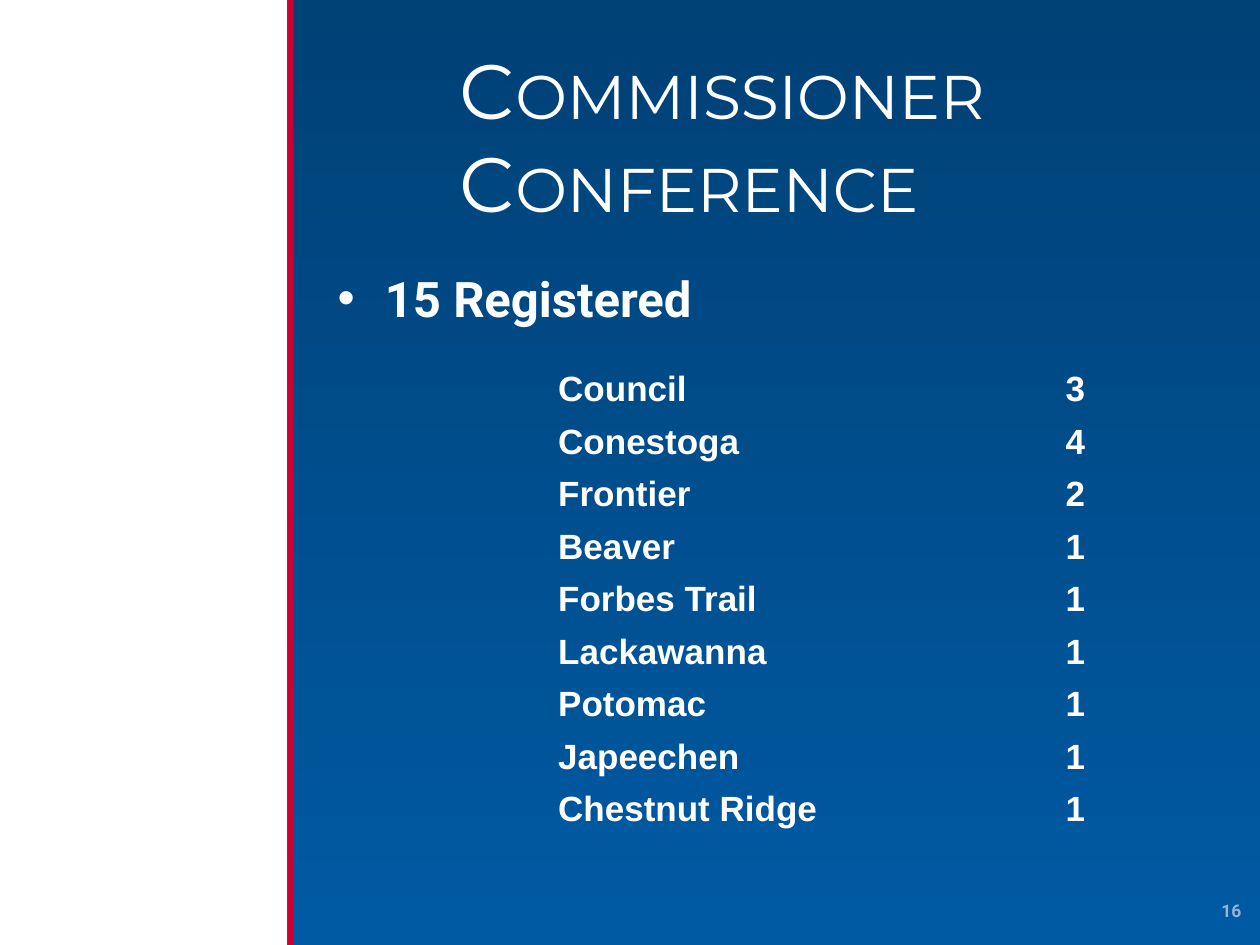
from pptx import Presentation
from pptx.dml.color import RGBColor
from pptx.enum.shapes import MSO_SHAPE
from pptx.enum.text import MSO_ANCHOR, MSO_AUTO_SIZE, PP_ALIGN
from pptx.util import Inches, Pt

COLS, ROWS = 100, 75
WHITE = "FFFFFF"
NO_GRID_STYLE = "{2D5ABB26-0587-4C30-8999-92F81FD0307C}"
REGISTRATIONS = [
    ("Council", 3),
    ("Conestoga", 4),
    ("Frontier", 2),
    ("Beaver", 1),
    ("Forbes Trail", 1),
    ("Lackawanna", 1),
    ("Potomac", 1),
    ("Japeechen", 1),
    ("Chestnut Ridge", 1),
]


def rgb(value):
    return RGBColor.from_string(value)


class Deck:
    """Holds the slide style and places elements on a 100 by 75 grid."""

    def __init__(self):
        self.prs = Presentation()
        self.prs.slide_width, self.prs.slide_height = Inches(10), Inches(7.5)
        self.slide = self.prs.slides.add_slide(self.prs.slide_layouts[1])

    def box(self, x, y, w, h):
        dx, dy = self.prs.slide_width / COLS, self.prs.slide_height / ROWS
        return int(x * dx), int(y * dy), int(w * dx), int(h * dy)

    def background(self, top, bottom):
        fill = self.slide.background.fill
        fill.gradient()
        fill.gradient_angle = 270
        for stop, position, color in zip(fill.gradient_stops, (0, 1), (top, bottom)):
            stop.position = position
            stop.color.rgb = rgb(color)

    def rect(self, area, color):
        sp = self.slide.shapes.add_shape(MSO_SHAPE.RECTANGLE, *self.box(*area))
        sp.shadow.inherit = False
        sp.fill.solid()
        sp.fill.fore_color.rgb = rgb(color)
        sp.line.fill.background()

    def set_text(self, tf, text, size, font, color=WHITE, bold=False, align=PP_ALIGN.LEFT):
        tf.text = text
        p = tf.paragraphs[0]
        p.alignment = align
        p.space_before = Pt(0)
        for r in p.runs:
            r.font.size, r.font.name, r.font.bold = Pt(size), font, bold
            r.font.color.rgb = rgb(color)
        return p

    def placeholder(self, idx, area, text, size, font, bold=False):
        sp = self.slide.placeholders[idx]
        sp.left, sp.top, sp.width, sp.height = self.box(*area)
        tf = sp.text_frame
        tf.word_wrap = True
        tf.auto_size = MSO_AUTO_SIZE.NONE
        tf.vertical_anchor = MSO_ANCHOR.TOP
        return self.set_text(tf, text, size, font, bold=bold)

    def title(self, area, text):
        p = self.placeholder(0, area, text, 44, "Montserrat")
        for r in p.runs:
            r._r.get_or_add_rPr().set("cap", "small")

    def bullet(self, area, text):
        self.placeholder(1, area, text, 28, "Roboto", bold=True)

    def page_number(self, area, number):
        tf = self.slide.shapes.add_textbox(*self.box(*area)).text_frame
        tf.word_wrap = True
        tf.vertical_anchor = MSO_ANCHOR.MIDDLE
        self.set_text(tf, str(number), 10, "Roboto", "95B3D7", True, PP_ALIGN.RIGHT)

    def table(self, area, rows, name_share):
        frame = self.slide.shapes.add_table(len(rows), 2, *self.box(*area))
        table = frame.table
        table.first_row = table.horz_banding = False
        table._tbl.tblPr[0].text = NO_GRID_STYLE
        table.columns[0].width = int(frame.width * name_share)
        table.columns[1].width = frame.width - table.columns[0].width
        for i, row in enumerate(rows):
            for j, value in enumerate(row):
                cell = table.cell(i, j)
                cell.fill.background()
                cell.margin_left = cell.margin_right = cell.margin_top = Inches(0.01)
                cell.margin_bottom = 0
                cell.vertical_anchor = MSO_ANCHOR.BOTTOM
                align = PP_ALIGN.RIGHT if j else PP_ALIGN.LEFT
                self.set_text(cell.text_frame, str(value), 20, "Arial", bold=True, align=align)


def main():
    deck = Deck()
    deck.background("004176", "005AA3")
    deck.rect((0, 0, 22.8, ROWS), WHITE)
    deck.rect((22.8, 0, 0.5, ROWS), "CF0031")
    deck.page_number((95, 70.3, 4.5, 4), 16)
    deck.title((35.5, 2.9, 48.9, 15.8), "Commissioner \vConference")
    deck.bullet((25.8, 20.8, 71.7, 9.2), "15 Registered")
    deck.table((44.2, 28.3, 31.6, 37.5), REGISTRATIONS, 0.83)
    deck.prs.save("out.pptx")


if __name__ == "__main__":
    main()
